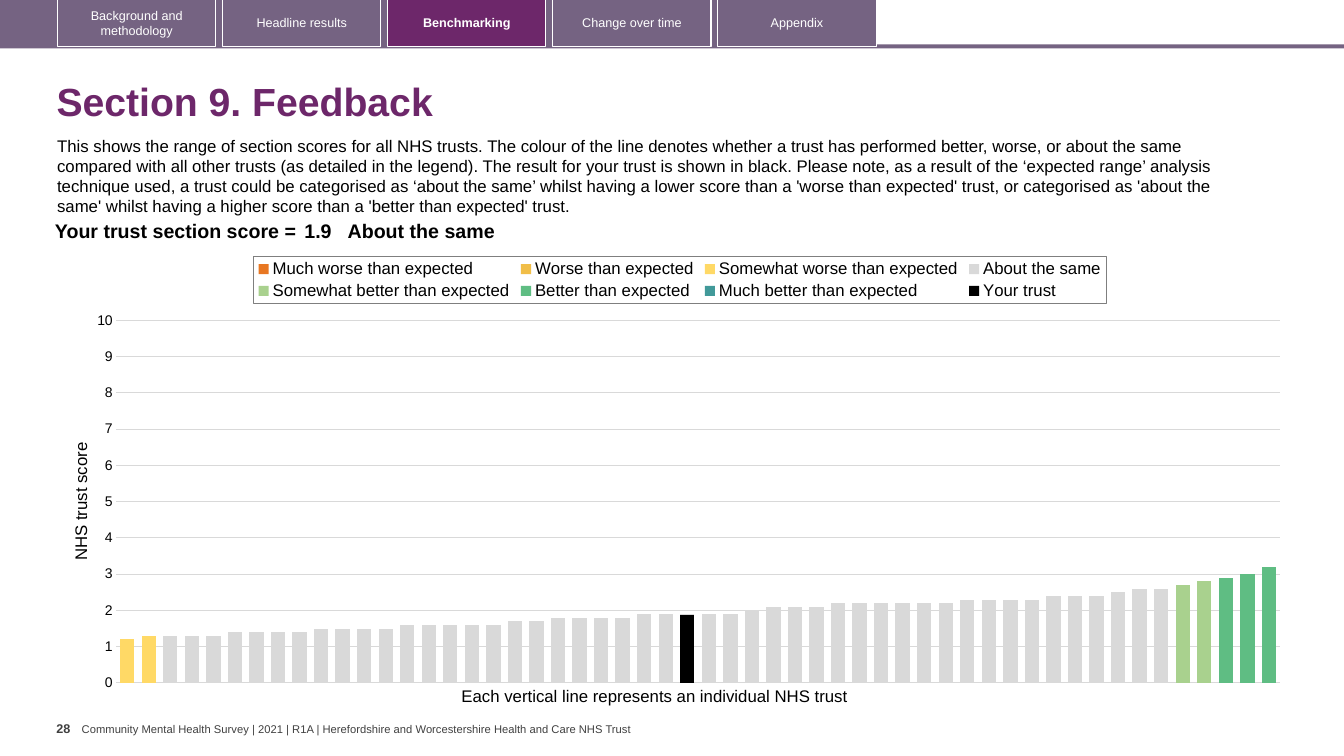
"""Build the benchmarking slide for the feedback section of a survey report."""
from copy import deepcopy

from pptx import Presentation
from pptx.chart.data import CategoryChartData
from pptx.dml.color import RGBColor
from pptx.enum.chart import XL_CHART_TYPE as Chart, XL_LEGEND_POSITION as Legend
from pptx.enum.chart import XL_TICK_LABEL_POSITION as Labels, XL_TICK_MARK as Tick
from pptx.enum.shapes import MSO_SHAPE as Shape
from pptx.enum.text import MSO_ANCHOR as Anchor, MSO_AUTO_SIZE as AutoSize, PP_ALIGN as Align
from pptx.oxml import parse_xml
from pptx.oxml.ns import nsdecls
from pptx.util import Cm, Pt

PURPLE = RGBColor(0x6D, 0x27, 0x6A)
MAUVE = RGBColor(0x75, 0x63, 0x82)
WHITE = RGBColor(0xFF, 0xFF, 0xFF)
BLACK = RGBColor(0x00, 0x00, 0x00)
DARK = RGBColor(0x40, 0x40, 0x40)
GREY = RGBColor(0xD9, 0xD9, 0xD9)
ORANGE = RGBColor(0xE8, 0x77, 0x22)
AMBER = RGBColor(0xF1, 0xBE, 0x48)
YELLOW = RGBColor(0xFF, 0xD9, 0x66)
LIGHT_GREEN = RGBColor(0xA9, 0xD1, 0x8E)
GREEN = RGBColor(0x5F, 0xBD, 0x83)
TEAL = RGBColor(0x41, 0x99, 0x99)


def set_font(font, size, colour=BLACK, bold=False):
    for key, value in {"name": "Arial", "size": Pt(size), "bold": bold}.items():
        setattr(font, key, value)
    font.color.rgb = colour


def add_rect(s, left, top, width, height):
    sp = s.shapes.add_shape(Shape.RECTANGLE, Cm(left), Cm(top), Cm(width), Cm(height))
    sp.shadow.inherit = False
    return sp


prs = Presentation()
prs.slide_width, prs.slide_height = Cm(33.87), Cm(19.05)
s = prs.slides.add_slide(prs.slide_layouts[5])

for top, width, height in [(1.12, 33.94, 0.1), (0, 22.17, 1.19)]:
    sp = add_rect(s, -0.07, top, width, height)
    sp.fill.solid()
    sp.fill.fore_color.rgb = MAUVE
    sp.line.fill.background()

tabs = ["Background and methodology", "Headline results", "Benchmarking",
        "Change over time", "Appendix"]
for i, tab in enumerate(tabs):
    current = tab == "Benchmarking"
    sp = add_rect(s, 1.45 + i * 4.16, -0.02, 3.99, 1.19)
    sp.fill.background()
    if current:
        sp.fill.solid()
        sp.fill.fore_color.rgb = PURPLE
    sp.line.color.rgb = WHITE
    sp.line.width = Pt(0.75)
    tf = sp.text_frame
    tf.word_wrap = True
    tf.vertical_anchor = Anchor.MIDDLE
    p = tf.paragraphs[0]
    p.alignment = Align.CENTER
    r = p.add_run()
    r.text = tab
    set_font(r.font, 9, WHITE, current)

title = s.shapes.title
place = {"left": Cm(1.17), "top": Cm(1.7), "width": Cm(31.72), "height": Cm(1.83)}
for key, value in place.items():
    setattr(title, key, value)
tf = title.text_frame
tf.auto_size = AutoSize.NONE
tf.vertical_anchor = Anchor.MIDDLE
p = tf.paragraphs[0]
p.alignment = Align.LEFT
p.line_spacing = 0.9
r = p.add_run()
r.text = "Section 9. Feedback"
set_font(r.font, 28, PURPLE, True)

intro = (
    "This shows the range of section scores for all NHS trusts. The colour of the line "
    "denotes whether a trust has performed better, worse, or about the same compared with "
    "all other trusts (as detailed in the legend). The result for your trust is shown in "
    "black. Please note, as a result of the ‘expected range’ analysis technique used, a "
    "trust could be categorised as ‘about the same’ whilst having a lower score than a "
    "'worse than expected' trust, or categorised as 'about the same' whilst having a higher "
    "score than a 'better than expected' trust.")
survey = ("Community Mental Health Survey | 2021 | R1A | "
          "Herefordshire and Worcestershire Health and Care NHS Trust")
axis_note = "Each vertical line represents an individual NHS trust"
texts = [
    (intro, (1.19, 3.28, 30.81, 2.31), 12, BLACK, False, True, (0.25, 0.13)),
    (axis_note, (11.38, 17.15, 10.44, 0.76), 12, BLACK, False, False, (0.25, 0.13)),
    ("28", (1.42, 18.03, 0.64, 1.02), 9, DARK, True, False, (0, 0.13)),
    (survey, (2.06, 18.19, 14.05, 0.33), 8, DARK, False, False, (0, 0)),
]
for text, box, size, colour, bold, wrap, (side, edge) in texts:
    tf = s.shapes.add_textbox(*map(Cm, box)).text_frame
    frame = {"word_wrap": wrap, "margin_left": Cm(side), "margin_right": Cm(side),
             "margin_top": Cm(edge), "margin_bottom": Cm(edge)}
    for key, value in frame.items():
        setattr(tf, key, value)
    r = tf.paragraphs[0].add_run()
    r.text = text
    set_font(r.font, size, colour, bold)

scores = [1.2, 1.3, 1.3, 1.3, 1.3, 1.4, 1.4, 1.4, 1.4, 1.5, 1.5, 1.5, 1.5, 1.6, 1.6, 1.6,
          1.6, 1.6, 1.7, 1.7, 1.8, 1.8, 1.8, 1.8, 1.9, 1.9, 1.9, 1.9, 1.9, 2, 2.1, 2.1,
          2.1, 2.2, 2.2, 2.2, 2.2, 2.2, 2.2, 2.3, 2.3, 2.3, 2.3, 2.4, 2.4, 2.4, 2.5, 2.6,
          2.6, 2.7, 2.8, 2.9, 3, 3.2]
bands = [
    ("Much worse than expected", ORANGE, 0, 0),
    ("Worse than expected", AMBER, 0, 0),
    ("Somewhat worse than expected", YELLOW, 0, 2),
    ("About the same", GREY, 2, 49),
    ("Somewhat better than expected", LIGHT_GREEN, 49, 51),
    ("Better than expected", GREEN, 51, 54),
    ("Much better than expected", TEAL, 54, 54),
]
data = CategoryChartData()
data.categories = [str(i + 1) for i in range(len(scores))]
for name, colour, start, end in bands:
    data.add_series(name, [v if start <= i < end else None for i, v in enumerate(scores)])
data.add_series("Your trust", [1.88 if i == 26 else None for i in range(len(scores))])
chart = s.shapes.add_chart(Chart.COLUMN_CLUSTERED, Cm(1.7), Cm(6.27), Cm(30.86), Cm(11.28),
                           data).chart
chart.has_title = False
chart.font.name = "Calibri"
chart.font.size = Pt(10)
chart.font.color.rgb = BLACK
plot = chart.plots[0]
for key, value in {"gap_width": 50, "overlap": 100, "vary_by_categories": False}.items():
    setattr(plot, key, value)
colours = [band[1] for band in bands] + [BLACK]
for series, colour in zip(plot.series, colours):
    series.format.fill.solid()
    series.format.fill.fore_color.rgb = colour
    series.invert_if_negative = False

chart.category_axis.visible = False
axis = chart.value_axis
scale = {"minimum_scale": 0, "maximum_scale": 10, "major_unit": 1,
         "major_tick_mark": Tick.OUTSIDE, "has_major_gridlines": False,
         "tick_label_position": Labels.NONE}
for key, value in scale.items():
    setattr(axis, key, value)
axis.format.line.fill.background()

area = chart.element.xpath(".//c:plotArea")[0]
bars = area.xpath("./c:barChart")[0]
right_bars = deepcopy(bars)
bars.remove(bars.xpath("./c:ser")[-1])
for ser in right_bars.xpath("./c:ser")[:-1]:
    right_bars.remove(ser)
bars.addnext(right_bars)
axes = area.xpath("./c:catAx | ./c:valAx")
right_axes = [deepcopy(ax) for ax in axes]
for node in [right_bars, *right_axes]:
    for ref in node.xpath("./c:axId | ./c:crossAx"):
        ref.set("val", str(int(ref.get("val")) + 1))
right_axes[1].xpath("./c:axPos")[0].set("val", "r")
right_axes[1].xpath("./c:crosses")[0].set("val", "max")
for ax in reversed(right_axes):
    axes[-1].addnext(ax)

axis.major_tick_mark = Tick.NONE
axis.tick_label_position = Labels.NEXT_TO_AXIS
set_font(axis.tick_labels.font, 10)
axis.has_major_gridlines = True
axis.major_gridlines.format.line.color.rgb = GREY
axis.major_gridlines.format.line.width = Pt(0.75)
r = axis.axis_title.text_frame.paragraphs[0].add_run()
r.text = "NHS trust score"
set_font(r.font, 12)
area.xpath(".//c:title//a:bodyPr")[0].set("rot", "-5400000")

for old in area.xpath("./c:layout"):
    area.remove(old)
layout = {"layoutTarget": "inner", "xMode": "edge", "yMode": "edge",
          "x": 0.04, "y": 0.16, "w": 0.95, "h": 0.81}
parts = "".join(f'<c:{key} val="{value}"/>' for key, value in layout.items())
area.insert(0, parse_xml(
    f'<c:layout {nsdecls("c")}><c:manualLayout>{parts}</c:manualLayout></c:layout>'))

chart.has_legend = True
chart.legend.position = Legend.TOP
chart.legend.include_in_layout = False
set_font(chart.legend.font, 12)
chart.element.xpath(".//c:legend/c:overlay")[0].addnext(parse_xml(
    f'<c:spPr {nsdecls("c", "a")}><a:ln w="9525"><a:solidFill><a:srgbClr val="7F7F7F"/>'
    '</a:solidFill></a:ln></c:spPr>'))

table = s.shapes.add_table(1, 3, Cm(0.89), Cm(5.46), Cm(29.69), Cm(0.56)).table
table.first_row = table.horz_banding = False
cells = [("Your trust section score =", 6.68, 0.1, Align.RIGHT),
         ("1.9", 1.19, 0.1, Align.LEFT), ("About the same", 21.82, 0, Align.LEFT)]
for i, (text, width, side, align) in enumerate(cells):
    table.columns[i].width = Cm(width)
    cell = table.cell(0, i)
    cell.fill.background()
    margins = {"margin_left": side, "margin_right": side, "margin_top": 0.1, "margin_bottom": 0.1}
    for key, value in margins.items():
        setattr(cell, key, Cm(value))
    p = cell.text_frame.paragraphs[0]
    p.alignment = align
    r = p.add_run()
    r.text = text
    set_font(r.font, 14, BLACK, True)

prs.save("out.pptx")
